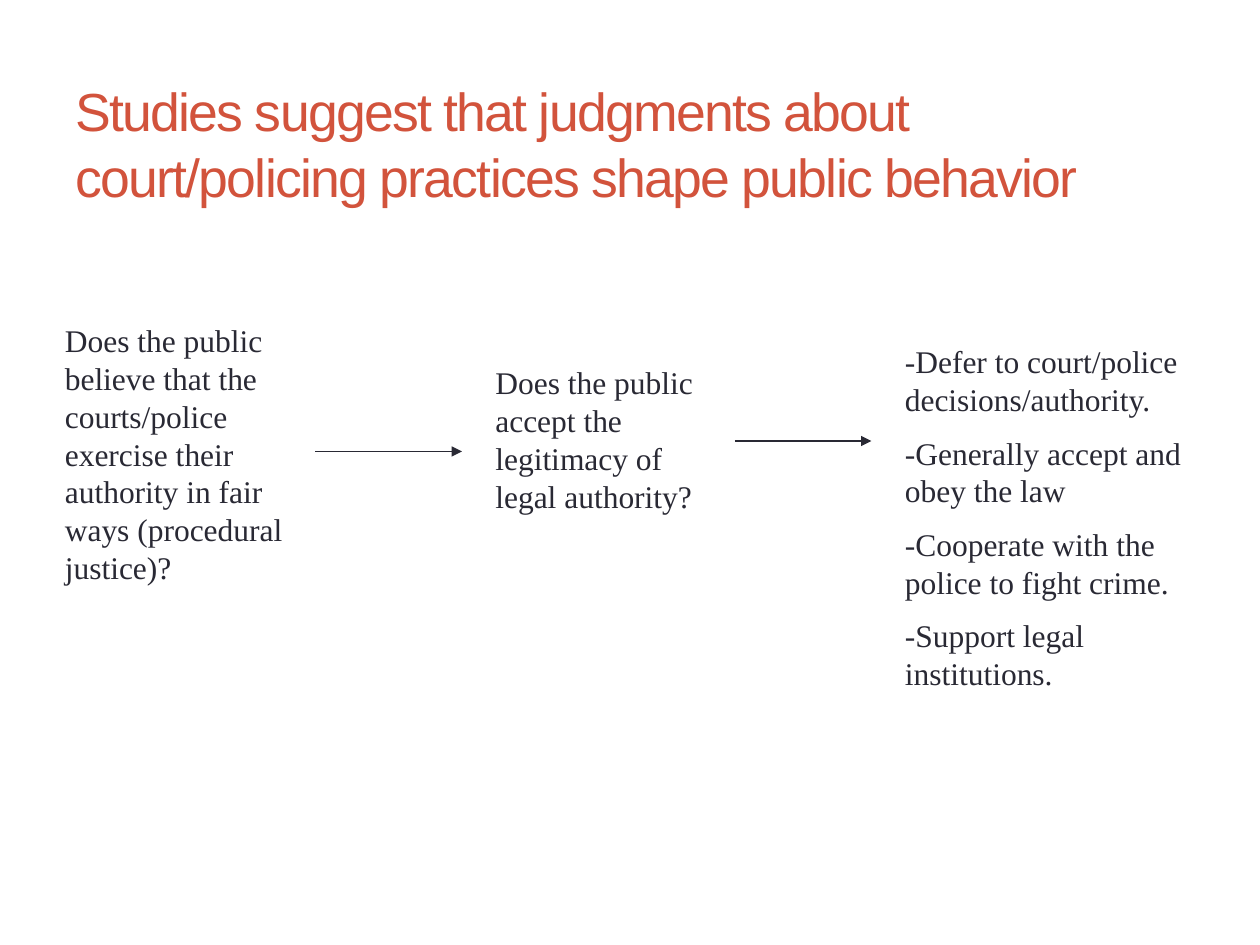
from lxml.etree import SubElement
from pptx import Presentation
from pptx.dml.color import RGBColor
from pptx.enum.shapes import MSO_CONNECTOR
from pptx.enum.text import MSO_ANCHOR
from pptx.oxml.ns import qn
from pptx.util import Inches, Pt

RED = RGBColor(0xD2, 0x53, 0x3C)
DARK = RGBColor(0x29, 0x29, 0x34)

# The grid has 120 columns and 90 rows, each 1/12 inch
CELL = Inches(1) / 12

TITLE = "Studies suggest that judgments about court/policing practices shape public behavior"
# Each stage: box (left, top, width, height) in grid cells, paragraphs
STAGES = [
    ((5, 30, 24, 26.4), ["Does the public believe that the courts/police exercise "
                         "their authority in fair ways (procedural justice)?"]),
    ((46, 34, 24, 15.6), ["Does the public accept the legitimacy of legal authority?"]),
    ((85, 32, 30, 35.5), ["-Defer to court/police decisions/authority.",
                          "-Generally accept and obey the law",
                          "-Cooperate with the police to fight crime.",
                          "-Support legal institutions."]),
]
# Each arrow: left column, right column, row
ARROWS = [(30, 44, 43), (70, 83, 42)]


def cells(*counts):
    return [round(count * CELL) for count in counts]


def add_text(page, box, paragraphs, font_name, size, color):
    frame = page.shapes.add_textbox(*cells(*box)).text_frame
    frame.word_wrap = True
    for index, text in enumerate(paragraphs):
        para = frame.paragraphs[0] if index == 0 else frame.add_paragraph()
        para.text = text
        para.space_before = Pt(size / 2 if index else 0)
        para.font.name = font_name
        para.font.size = Pt(size)
        para.font.color.rgb = color
    return frame


def add_title(page, box):
    frame = add_text(page, box, [TITLE], "Arial", 30.6, RED)
    frame.vertical_anchor = MSO_ANCHOR.MIDDLE
    para = frame.paragraphs[0]
    para.line_spacing = 1.04
    # Tighten the letters by one point
    para.runs[0].font._element.set("spc", "-100")


def add_arrow(page, left, right, row):
    arrow = page.shapes.add_connector(MSO_CONNECTOR.STRAIGHT, *cells(left, row, right, row))
    arrow.line.color.rgb = DARK
    arrow.line.width = Pt(0.75)
    SubElement(arrow.line._get_or_add_ln(), qn("a:tailEnd"), type="triangle")
    SubElement(arrow._element.spPr, qn("a:effectLst"))


def add_flow(page):
    for box, paragraphs in STAGES:
        add_text(page, box, paragraphs, "Times New Roman", 18, DARK)
    for left, right, row in ARROWS:
        add_arrow(page, left, right, row)


def main():
    deck = Presentation()
    deck.slide_width, deck.slide_height = Inches(10), Inches(7.5)
    page = deck.slides.add_slide(deck.slide_layouts[6])
    add_title(page, (6, 7, 108, 13))
    add_flow(page)
    deck.save("out.pptx")


if __name__ == "__main__":
    main()
